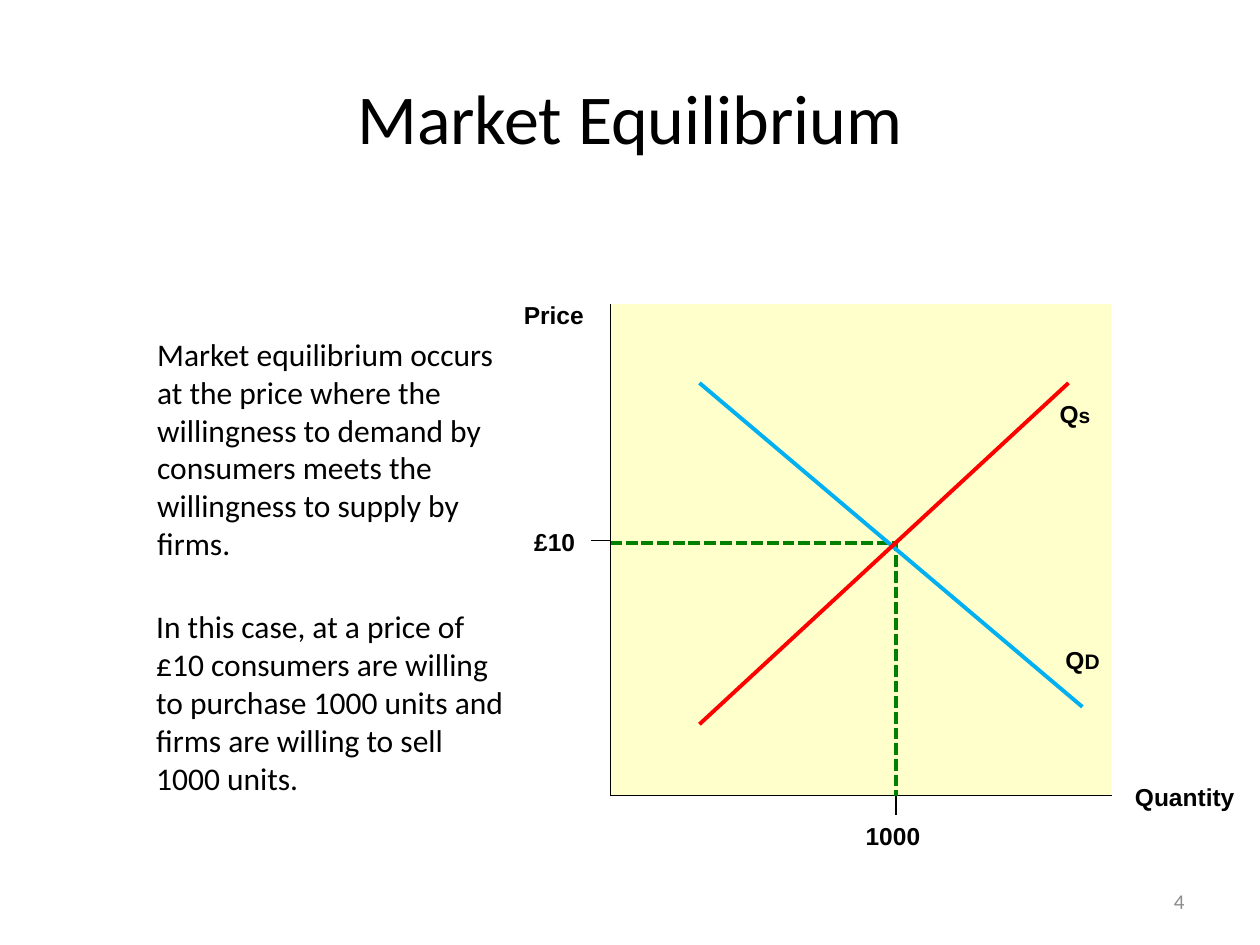
import pptx
import pptx.dml.color
import pptx.enum.dml
import pptx.enum.shapes
import pptx.enum.text
import pptx.oxml.ns
import pptx.util
from lxml import etree
from pptx.util import Cm, Pt

HUES = {"black": "000000", "white": "FFFFFF", "cream": "FFFFCC", "green": "008000",
        "blue": "00B0F0", "red": "FF0000", "grey": "8C8C8C"}
hues = {name: pptx.dml.color.RGBColor.from_string(code) for name, code in HUES.items()}
KIND = pptx.enum.shapes.MSO_CONNECTOR

deck = pptx.Presentation()
deck.slide_width, deck.slide_height = Cm(25.4), Cm(19.05)
slide = deck.slides.add_slide(deck.slide_layouts[5])


def add_line(x1, y1, x2, y2, hue="black", width=0.75, kind=KIND.STRAIGHT):
    line = slide.shapes.add_connector(kind, Cm(x1), Cm(y1), Cm(x2), Cm(y2))
    line.line.color.rgb = hues[hue]
    line.line.width = Pt(width)
    etree.SubElement(line._element.spPr, pptx.oxml.ns.qn("a:effectLst"))
    return line


def add_text(text, x, y, w, h, size, face="Calibri", bold=False, hue="black"):
    box = slide.shapes.add_textbox(Cm(x), Cm(y), Cm(w), Cm(h))
    box.text_frame.word_wrap = True
    box.text_frame.text = text
    font = box.text_frame.paragraphs[0].runs[0].font
    font.name, font.size, font.bold = face, Pt(size), bold
    font.color.rgb = hues[hue]
    return box


# Title
title = slide.shapes.title
title.left, title.top, title.width, title.height = Cm(1.27), Cm(0.76), Cm(22.86), Cm(3.18)
title.text_frame.text = "Market Equilibrium"
font = title.text_frame.paragraphs[0].runs[0].font
font.name, font.size = "Calibri", Pt(40)
font.color.rgb = hues["black"]

# Plot area, axes and ticks
left, top, right, base = 12.3, 6.12, 22.41, 16.04
price, amount = 10.95, 18.06
plot = slide.shapes.add_shape(pptx.enum.shapes.MSO_SHAPE.RECTANGLE,
                              Cm(left), Cm(top), Cm(right - left), Cm(base - top))
plot.shadow.inherit = False
plot.fill.solid()
plot.fill.fore_color.rgb = hues["cream"]
plot.line.color.rgb = hues["white"]
plot.line.width = Pt(0.75)

add_line(left - 0.39, 10.9, left, 10.9)
add_line(amount, base, amount, base + 0.39)
add_line(left, base, right, base)

# Equilibrium guide: across at the price, then down to the quantity
guide = add_line(left, price, amount, base, "green", 2.25, KIND.ELBOW)
guide.line.dash_style = pptx.enum.dml.MSO_LINE.SQUARE_DOT
guide._element.spPr.find(pptx.oxml.ns.qn("a:prstGeom")).set("prst", "bentConnector2")

add_line(left, top, left, base)

# Demand and supply
add_line(14.1, 7.72, 21.82, 14.25, "blue", 2.25)
add_line(21.54, 7.72, 14.1, 14.6, "red", 2.25)

# Labels
for text, x, y, w in [("£10", 10.52, 10.49, 1.4), ("1000", 17.2, 16.43, 1.85),
                      ("Price", 10.31, 5.92, 1.98), ("Quantity", 22.63, 15.65, 2.77)]:
    add_text(text, x, y, w, 0.86, 14, "Arial", True)

for mark, x, y in [("D", 21.23, 12.88), ("s", 21.11, 7.92)]:
    box = add_text("Q", x, y, 1.57, 0.86, 14, "Arial", True)
    run = box.text_frame.paragraphs[0].add_run()
    run.text = mark
    run.font.name, run.font.size, run.font.bold = "Arial", Pt(12), True
    run.font.color.rgb = hues["black"]

# Explanation
add_text("Market equilibrium occurs at the price where the willingness to demand by "
         "consumers meets the willingness to supply by firms.", 2.92, 6.63, 7.52, 4.95, 18)
add_text("In this case, at a price of £10 consumers are willing to purchase 1000 units "
         "and firms are willing to sell 1000 units.", 2.9, 12.12, 7.59, 4.11, 18)

# Page number
page = add_text("4", 18.21, 17.65, 5.92, 1.02, 12, hue="grey")
page.text_frame.vertical_anchor = pptx.enum.text.MSO_ANCHOR.MIDDLE
page.text_frame.paragraphs[0].alignment = pptx.enum.text.PP_ALIGN.RIGHT

deck.save("out.pptx")
